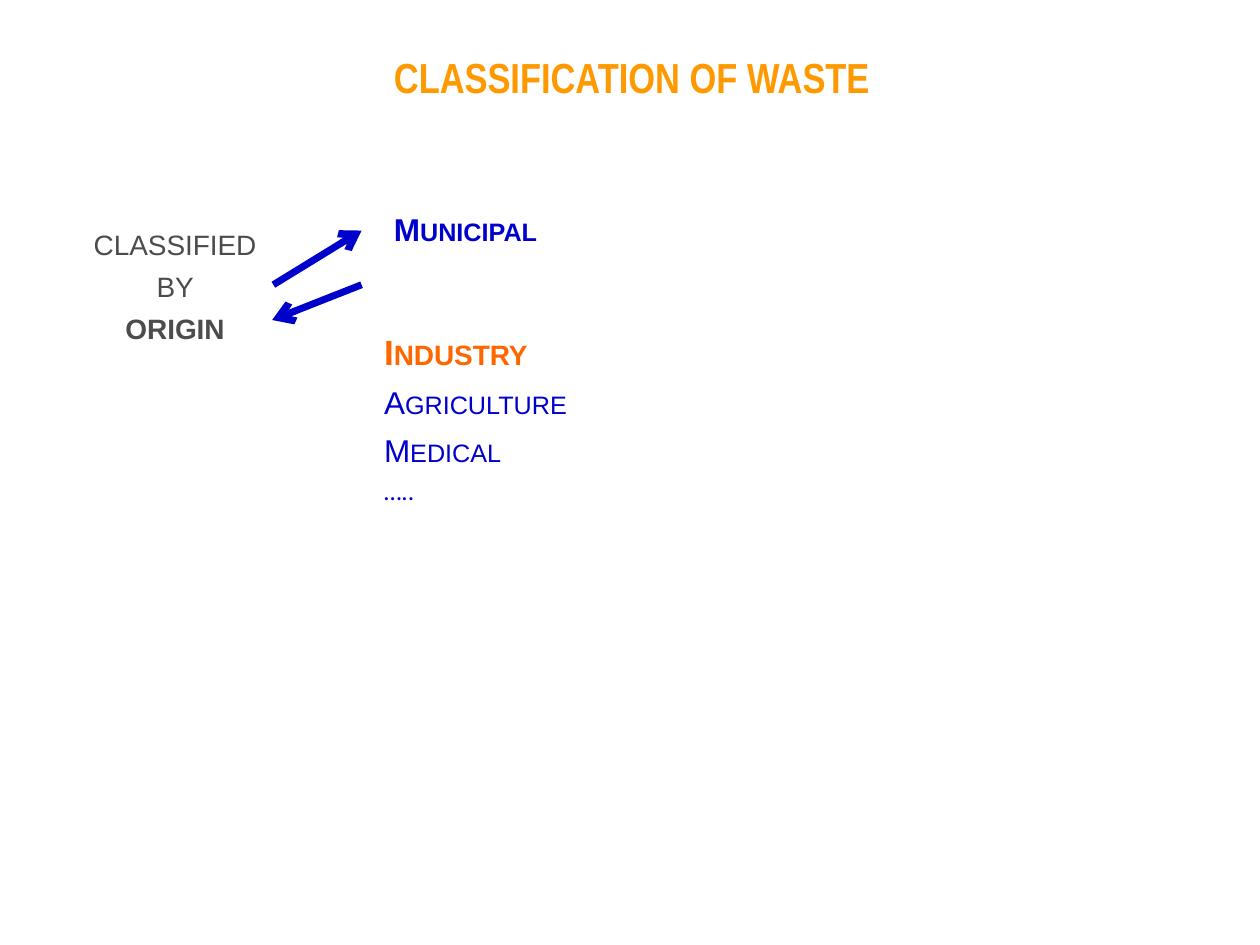
"""Build the slide on the classification of waste by origin."""
from lxml import etree
from pptx import Presentation
from pptx.dml.color import RGBColor
from pptx.enum.shapes import MSO_CONNECTOR
from pptx.enum.text import MSO_ANCHOR, MSO_AUTO_SIZE, PP_ALIGN
from pptx.oxml.ns import qn
from pptx.util import Inches, Pt

COLORS = {"title": "FF9900", "text": "4C4C4C", "blue": "0000CC", "orange": "FF6600"}


def place(s, left, top, width, height):
    """Position a text shape and return its wrapped text frame."""
    s.left, s.top, s.width, s.height = map(Inches, (left, top, width, height))
    tf = s.text_frame
    tf.word_wrap = True
    tf.auto_size = MSO_AUTO_SIZE.NONE
    tf.vertical_anchor = MSO_ANCHOR.TOP
    return tf


def add_run(p, text, size, color, bold=False, name="Arial", **attrs):
    """Add a formatted run with optional run-property attributes."""
    r = p.add_run()
    r.text = text
    for key, value in {"size": Pt(size), "bold": bold, "name": name}.items():
        setattr(r.font, key, value)
    r.font.color.rgb = RGBColor.from_string(COLORS[color])
    for key, value in attrs.items():
        r.font._element.set(key, value)


prs = Presentation()
prs.slide_width, prs.slide_height = Inches(10), Inches(7.5)
slide = prs.slides.add_slide(prs.slide_layouts[5])
shapes = slide.shapes

tf = place(shapes.title, 1.61, 0.36, 6.81, 0.5)
tf.vertical_anchor = MSO_ANCHOR.MIDDLE
p = tf.paragraphs[0]
p.alignment = PP_ALIGN.CENTER
add_run(p, "CLASSIFICATION OF WASTE", 24, "title", True, "Arial Narrow")

tf = place(shapes.add_textbox(0, 0, 0, 0), 0.62, 1.7, 1.54, 1.11)
tf.margin_left = tf.margin_right = Inches(0.05)
p = tf.paragraphs[0]
p.alignment = PP_ALIGN.CENTER
p.line_spacing = Pt(24)
add_run(p, "classified by", 20, "text", cap="small")
add_run(p, " ", 20, "text", cap="small", spc="1350")
add_run(p, "origin", 20, "text", True, cap="small")

tf = place(shapes.add_textbox(0, 0, 0, 0), 2.87, 1.62, 1.65, 0.4)
tf.vertical_anchor = MSO_ANCHOR.MIDDLE
p = tf.paragraphs[0]
p.alignment = PP_ALIGN.CENTER
add_run(p, "Municipal", 18, "blue", True, cap="small")

for ends in ((2.17, 2.26, 2.87, 1.83), (2.87, 2.26, 2.16, 2.54)):
    arrow = shapes.add_connector(MSO_CONNECTOR.STRAIGHT, *map(Inches, ends))
    arrow.line.width = Pt(4)
    arrow.line.color.rgb = RGBColor.from_string(COLORS["blue"])
    etree.SubElement(arrow.line._get_or_add_ln(), qn("a:tailEnd"), type="arrow")
    etree.SubElement(arrow._element.spPr, qn("a:effectLst"))

tf = place(shapes.add_textbox(0, 0, 0, 0), 2.95, 2.57, 1.73, 1.51)
origins = [
    ("Industry", 20, "orange", True, "Arial", 6),
    ("Agriculture", 18, "blue", False, "Arial", 6),
    ("Medical", 18, "blue", False, "Arial", 6),
    ("…..", 18, "blue", False, "Calibri", 0),
]
for i, (text, size, color, bold, name, before) in enumerate(origins):
    p = tf.add_paragraph() if i else tf.paragraphs[0]
    p.space_before = Pt(before)
    add_run(p, text, size, color, bold, name, cap="small")

prs.save("out.pptx")
